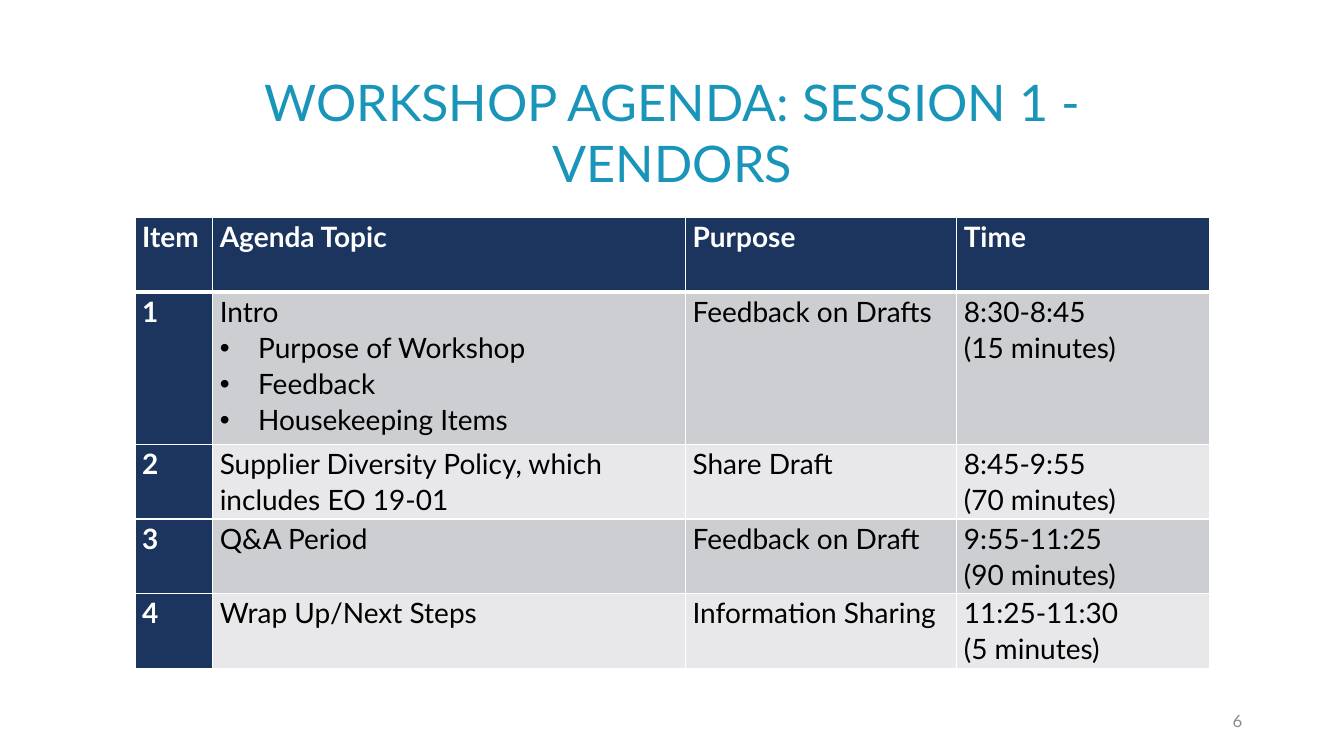
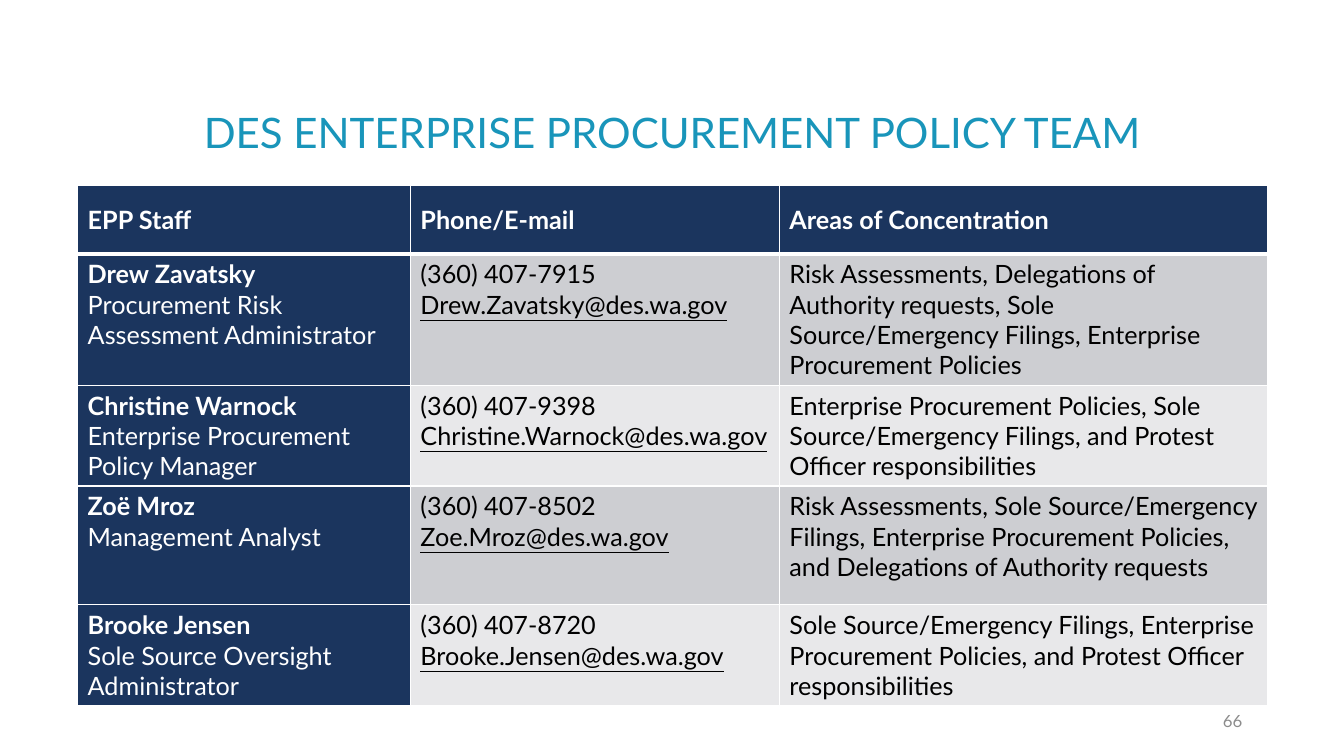
from dataclasses import dataclass

from lxml import etree
from pptx import Presentation
from pptx.dml.color import RGBColor
from pptx.enum.text import MSO_ANCHOR, PP_ALIGN
from pptx.oxml.ns import qn
from pptx.util import Inches, Pt

CENTER, RIGHT = PP_ALIGN.CENTER, PP_ALIGN.RIGHT
TOP, MIDDLE = MSO_ANCHOR.TOP, MSO_ANCHOR.MIDDLE

FONT = "Lato"
COLORS = {
    "title": "1995BA",
    "navy": "1B355E",
    "dark_band": "CDCED2",
    "light_band": "E8E8EA",
    "white": "FFFFFF",
    "black": "000000",
    "number": "8C8C8C",
}
BLANK_LAYOUT = 6
BULLET_INDENT = 0.38
THIN_RULE, HEADER_RULE = 1, 3


@dataclass
class TableStyle:
    """Text size in points, cell margins in inches, and header anchoring."""
    size: int
    side_margin: float
    end_margin: float
    header_anchor: MSO_ANCHOR
    line_spacing: float


@dataclass
class Line:
    """One paragraph of a cell."""
    text: str
    bold: bool = False
    underline: bool = False
    bullet: bool = False


AGENDA_STYLE = TableStyle(20, 0.07, 0, TOP, 1.07)
TEAM_STYLE = TableStyle(18, 0.1, 0.05, MIDDLE, 1.0)

AGENDA_HEADERS = ["Item", "Agenda Topic", "Purpose", "Time"]
AGENDA = [
    (["Intro", "Purpose of Workshop", "Feedback", "Housekeeping Items"],
     "Feedback on Drafts", "8:30-8:45", "(15 minutes)"),
    (["Supplier Diversity Policy, which includes EO 19-01"],
     "Share Draft", "8:45-9:55", "(70 minutes)"),
    (["Q&A Period"], "Feedback on Draft", "9:55-11:25", "(90 minutes)"),
    (["Wrap Up/Next Steps"], "Information Sharing", "11:25-11:30", "(5 minutes)"),
]

TEAM_HEADERS = ["EPP Staff", "Phone/E-mail", "Areas of Concentration"]
TEAM = [
    ("Drew Zavatsky", "Procurement Risk Assessment Administrator",
     "(360) 407-7915", "Drew.Zavatsky@des.wa.gov",
     "Risk Assessments, Delegations of Authority requests, Sole "
     "Source/Emergency Filings, Enterprise Procurement Policies"),
    ("Christine Warnock", "Enterprise Procurement Policy Manager",
     "(360) 407-9398", "Christine.Warnock@des.wa.gov",
     "Enterprise Procurement Policies, Sole Source/Emergency Filings, "
     "and Protest Officer responsibilities"),
    ("Zoë Mroz", "Management Analyst",
     "(360) 407-8502", "Zoe.Mroz@des.wa.gov",
     "Risk Assessments, Sole Source/Emergency Filings, Enterprise "
     "Procurement Policies, and Delegations of Authority requests"),
    ("Brooke Jensen", "Sole Source Oversight Administrator",
     "(360) 407-8720", "Brooke.Jensen@des.wa.gov",
     "Sole Source/Emergency Filings, Enterprise Procurement Policies, "
     "and Protest Officer responsibilities"),
]


def color(name):
    return RGBColor.from_string(COLORS[name])


def set_font(para, size, color_name, bold=False, underline=False):
    font = para.font
    font.name = FONT
    font.size = Pt(size)
    font.color.rgb = color(color_name)
    font.bold = bold
    font.underline = underline


def add_label(page, bounds, text, size, color_name, align):
    box = page.shapes.add_textbox(*map(Inches, bounds))
    frame = box.text_frame
    frame.word_wrap = True
    frame.vertical_anchor = MIDDLE
    para = frame.paragraphs[0]
    para.text = text
    para.alignment = align
    set_font(para, size, color_name)


def add_page(deck, title, title_size, number):
    page = deck.slides.add_slide(deck.slide_layouts[BLANK_LAYOUT])
    add_label(page, (1.34, 0.91, 10.66, 0.8), title, title_size, "title", CENTER)
    add_label(page, (9.42, 6.95, 3, 0.4), str(number), 12, "number", RIGHT)
    return page


def add_bullet(para):
    properties = para._p.get_or_add_pPr()
    indent = Inches(BULLET_INDENT)
    properties.set("marL", str(indent))
    properties.set("indent", str(-indent))
    bullet_font = etree.SubElement(properties, qn("a:buFont"))
    bullet_font.set("typeface", "Arial")
    etree.SubElement(properties, qn("a:buChar")).set("char", "•")


def set_borders(cell, top, bottom):
    """Draw white rules; these must come before the fill in the cell properties."""
    widths = {"a:lnL": THIN_RULE, "a:lnR": THIN_RULE, "a:lnT": top, "a:lnB": bottom}
    properties = cell._tc.get_or_add_tcPr()
    for position, (tag, width) in enumerate(widths.items()):
        rule = etree.Element(qn(tag), w=str(Pt(width)))
        fill = etree.SubElement(rule, qn("a:solidFill"))
        etree.SubElement(fill, qn("a:srgbClr")).set("val", COLORS["white"])
        properties.insert(position, rule)


def fill_cell(cell, lines, style, fill_name, text_color):
    cell.margin_left = cell.margin_right = Inches(style.side_margin)
    cell.margin_top = cell.margin_bottom = Inches(style.end_margin)
    cell.fill.solid()
    cell.fill.fore_color.rgb = color(fill_name)
    frame = cell.text_frame
    for index, line in enumerate(lines):
        para = frame.add_paragraph() if index else frame.paragraphs[0]
        para.text = line.text
        para.line_spacing = style.line_spacing
        if line.bullet:
            add_bullet(para)
        set_font(para, style.size, text_color, line.bold, line.underline)


def add_grid(page, left, top, widths, heights, rows, style):
    """Add a table with a navy header row, a navy first column and grey bands."""
    frame = page.shapes.add_table(
        len(rows), len(widths), Inches(left), Inches(top),
        Inches(sum(widths)), Inches(sum(heights)))
    table = frame.table
    table.horz_banding = False
    for column, width in zip(table.columns, widths):
        column.width = Inches(width)
    for row_index, (row, height) in enumerate(zip(rows, heights)):
        table.rows[row_index].height = Inches(height)
        band = "dark_band" if row_index % 2 else "light_band"
        for column_index, lines in enumerate(row):
            cell = table.cell(row_index, column_index)
            is_navy = row_index == 0 or column_index == 0
            fill_cell(cell, lines, style, "navy" if is_navy else band,
                      "white" if is_navy else "black")
            cell.vertical_anchor = TOP if row_index else style.header_anchor
            set_borders(cell, HEADER_RULE if row_index == 1 else THIN_RULE,
                        HEADER_RULE if row_index == 0 else THIN_RULE)


def header_row(names):
    return [[Line(name, bold=True)] for name in names]


def agenda_row(item, topics, purpose, hours, duration):
    topic_lines = [Line(topic, bullet=index > 0) for index, topic in enumerate(topics)]
    return [[Line(str(item), bold=True)], topic_lines, [Line(purpose)],
            [Line(hours), Line(duration)]]


def team_row(name, role, phone, email, areas):
    return [[Line(name, bold=True), Line(role)],
            [Line(phone), Line(email, underline=True)],
            [Line(areas)]]


def add_agenda_page(deck):
    page = add_page(deck, "WORKSHOP AGENDA: SESSION 1 - VENDORS", 36, 6)
    rows = [header_row(AGENDA_HEADERS)]
    rows += [agenda_row(item, *entry) for item, entry in enumerate(AGENDA, start=1)]
    add_grid(page, 1.34, 2.16, [0.77, 4.69, 2.69, 2.51],
             [0.74, 1.51, 0.74, 0.74, 0.74], rows, AGENDA_STYLE)


def add_team_page(deck):
    page = add_page(deck, "DES ENTERPRISE PROCUREMENT POLICY TEAM", 30, 66)
    rows = [header_row(TEAM_HEADERS)] + [team_row(*member) for member in TEAM]
    add_grid(page, 0.77, 1.84, [3.3, 3.66, 4.84],
             [0.68, 1.18, 0.97, 1.18, 0.97], rows, TEAM_STYLE)


def main():
    deck = Presentation()
    deck.slide_width = Inches(13.33)
    deck.slide_height = Inches(7.5)
    add_agenda_page(deck)
    add_team_page(deck)
    deck.save("out.pptx")


if __name__ == "__main__":
    main()
